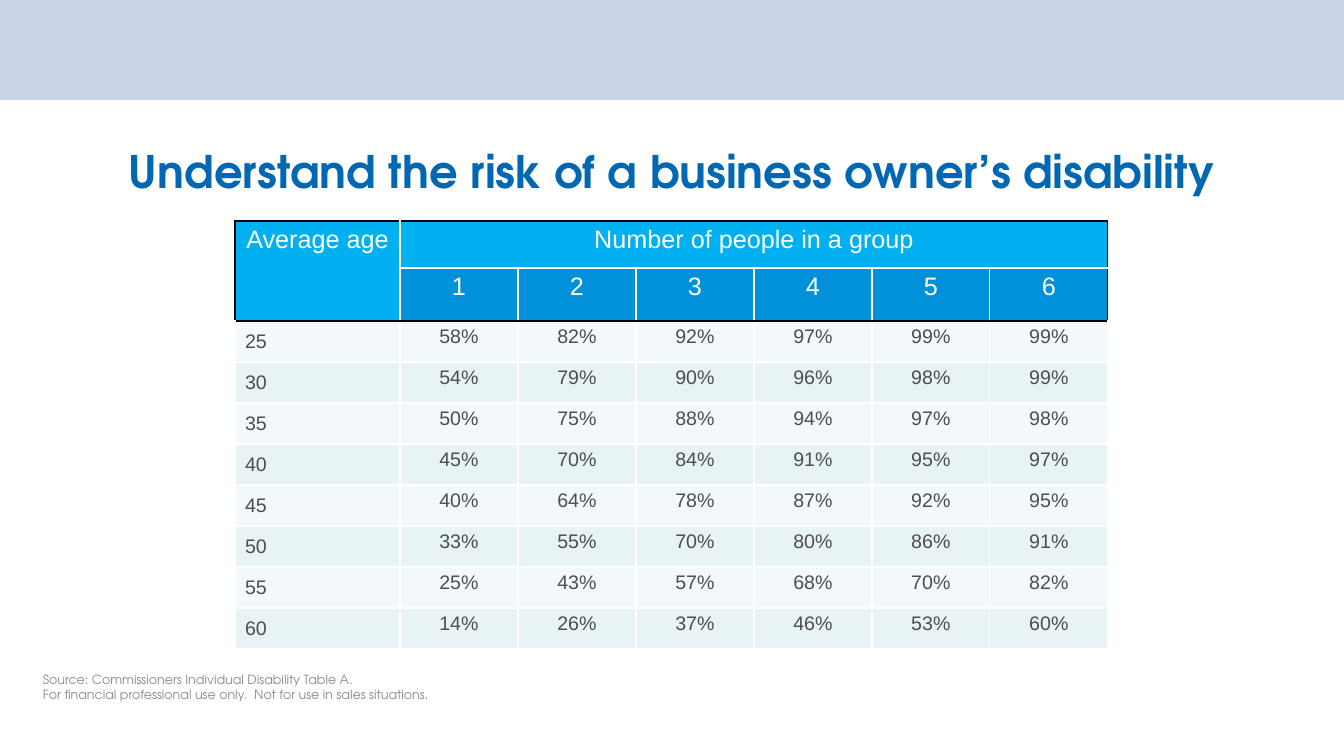
from typing import NamedTuple

from lxml.etree import SubElement
from pptx import Presentation
from pptx.dml.color import RGBColor
from pptx.enum.shapes import MSO_SHAPE
from pptx.enum.text import MSO_ANCHOR, MSO_AUTO_SIZE, PP_ALIGN
from pptx.oxml.ns import qn
from pptx.slide import Slide
from pptx.table import Table, _Cell
from pptx.text.text import _Paragraph
from pptx.util import Emu, Pt

EMU_PER_PX = 914400 / 100.8
SLIDE_WIDTH, SLIDE_HEIGHT = 1344, 756

TITLE_FONT, TABLE_FONT = "TeX Gyre Adventor", "Arial"
WHITE, BLACK = "FFFFFF", "000000"
BAND_BLUE, TITLE_BLUE = "C8D3E6", "0068B3"
HEADER_BLUE, NUMBER_BLUE = "00B0F0", "0091DA"
BODY_FILLS = ("F3F9FA", "E7F3F4")
BODY_GREY, SOURCE_GREY = "4D4E53", "8C8C8C"

HEADER_ROWS = 2
GROUP_SIZES = (1, 2, 3, 4, 5, 6)
HEADER_HEIGHTS = (47, 53)
BODY_HEIGHT = 41
AGE_WIDTH, RISK_WIDTH = 165, 118


class AgeRow(NamedTuple):
    age: int
    risks: tuple[int, ...]


class CellStyle(NamedTuple):
    fill: str
    size: int
    color: str
    align: PP_ALIGN = PP_ALIGN.CENTER
    anchor: MSO_ANCHOR = MSO_ANCHOR.TOP


AGE_ROWS = (
    AgeRow(25, (58, 82, 92, 97, 99, 99)),
    AgeRow(30, (54, 79, 90, 96, 98, 99)),
    AgeRow(35, (50, 75, 88, 94, 97, 98)),
    AgeRow(40, (45, 70, 84, 91, 95, 97)),
    AgeRow(45, (40, 64, 78, 87, 92, 95)),
    AgeRow(50, (33, 55, 70, 80, 86, 91)),
    AgeRow(55, (25, 43, 57, 68, 70, 82)),
    AgeRow(60, (14, 26, 37, 46, 53, 60)),
)
SOURCE_LINES = (
    "Source: Commissioners Individual Disability Table A.",
    "For financial professional use only.  Not for use in sales situations.",
)


def px(length: int) -> Emu:
    return Emu(round(length * EMU_PER_PX))


def rgb(color: str) -> RGBColor:
    return RGBColor.from_string(color)


def set_font(paragraph: _Paragraph, name: str, size: int, color: str, bold: bool = False) -> None:
    font = paragraph.font
    font.name, font.size, font.bold = name, Pt(size), bold
    font.color.rgb = rgb(color)


def add_band(slide: Slide) -> None:
    band = slide.shapes.add_shape(MSO_SHAPE.RECTANGLE, 0, 0, px(SLIDE_WIDTH), px(100))
    band.shadow.inherit = False
    band.fill.solid()
    band.fill.fore_color.rgb = rgb(BAND_BLUE)
    band.line.fill.background()


def format_title(slide: Slide) -> None:
    title = slide.shapes.title
    title.left, title.top, title.width, title.height = px(73), px(145), px(1198), px(58)
    frame = title.text_frame
    frame.text = "Understand the risk of a business owner’s disability"
    frame.vertical_anchor = MSO_ANCHOR.MIDDLE
    frame.auto_size = MSO_AUTO_SIZE.NONE
    paragraph = frame.paragraphs[0]
    paragraph.alignment = PP_ALIGN.CENTER
    paragraph.line_spacing = 0.9
    set_font(paragraph, TITLE_FONT, 32, TITLE_BLUE, bold=True)


def add_source(slide: Slide) -> None:
    frame = slide.shapes.add_textbox(px(33), px(672), px(492), px(30)).text_frame
    frame.word_wrap = True
    frame.vertical_anchor = MSO_ANCHOR.MIDDLE
    frame.text = "\n".join(SOURCE_LINES)
    for paragraph in frame.paragraphs:
        set_font(paragraph, TITLE_FONT, 9, SOURCE_GREY)


def set_borders(cell: _Cell, row: int, column: int) -> None:
    """Outline the header block in black and rule everything else in white."""
    last_row = row + cell.span_height - 1
    last_column = column + cell.span_width - 1
    in_header = row < HEADER_ROWS
    black_edges = {
        "a:lnL": in_header and column == 0,
        "a:lnR": in_header and last_column == len(GROUP_SIZES),
        "a:lnT": row in (0, HEADER_ROWS),
        "a:lnB": last_row == HEADER_ROWS - 1,
    }
    properties = cell._tc.get_or_add_tcPr()
    for tag, is_black in black_edges.items():
        line = SubElement(properties, qn(tag), w=str(Pt(1)))
        fill = SubElement(line, qn("a:solidFill"))
        SubElement(fill, qn("a:srgbClr"), val=BLACK if is_black else WHITE)


def cell_style(row: int, column: int) -> CellStyle:
    if row < HEADER_ROWS:
        is_number = row == 1 and column > 0
        return CellStyle(NUMBER_BLUE if is_number else HEADER_BLUE, 18, WHITE)
    fill = BODY_FILLS[(row - HEADER_ROWS) % 2]
    if column == 0:
        return CellStyle(fill, 14, BODY_GREY, PP_ALIGN.LEFT, MSO_ANCHOR.MIDDLE)
    return CellStyle(fill, 14, BODY_GREY)


def format_cell(cell: _Cell, text: str, row: int, column: int) -> None:
    style = cell_style(row, column)
    set_borders(cell, row, column)
    cell.fill.solid()
    cell.fill.fore_color.rgb = rgb(style.fill)
    cell.vertical_anchor = style.anchor
    cell.text = text
    paragraph = cell.text_frame.paragraphs[0]
    paragraph.alignment = style.align
    set_font(paragraph, TABLE_FONT, style.size, style.color)


def size_table(table: Table) -> None:
    for index, column in enumerate(table.columns):
        column.width = px(RISK_WIDTH if index else AGE_WIDTH)
    for index, row in enumerate(table.rows):
        row.height = px(HEADER_HEIGHTS[index] if index < HEADER_ROWS else BODY_HEIGHT)


def add_risk_table(slide: Slide) -> None:
    groups = len(GROUP_SIZES)
    texts = [
        ["Average age", "Number of people in a group"] + [""] * (groups - 1),
        [""] + [str(size) for size in GROUP_SIZES],
    ]
    texts += [[str(entry.age)] + [f"{risk}%" for risk in entry.risks] for entry in AGE_ROWS]

    width = AGE_WIDTH + groups * RISK_WIDTH
    height = sum(HEADER_HEIGHTS) + len(AGE_ROWS) * BODY_HEIGHT
    table = slide.shapes.add_table(
        len(texts), groups + 1, px(235), px(221), px(width), px(height)
    ).table
    table.first_row = table.horz_banding = False
    size_table(table)
    table.cell(0, 0).merge(table.cell(1, 0))
    table.cell(0, 1).merge(table.cell(0, groups))
    for row, row_texts in enumerate(texts):
        for column, text in enumerate(row_texts):
            format_cell(table.cell(row, column), text, row, column)


def main() -> None:
    presentation = Presentation()
    presentation.slide_width, presentation.slide_height = px(SLIDE_WIDTH), px(SLIDE_HEIGHT)
    title_only = presentation.slide_layouts.get_by_name("Title Only")
    slide = presentation.slides.add_slide(title_only)
    add_band(slide)
    format_title(slide)
    add_source(slide)
    add_risk_table(slide)
    presentation.save("out.pptx")


if __name__ == "__main__":
    main()
